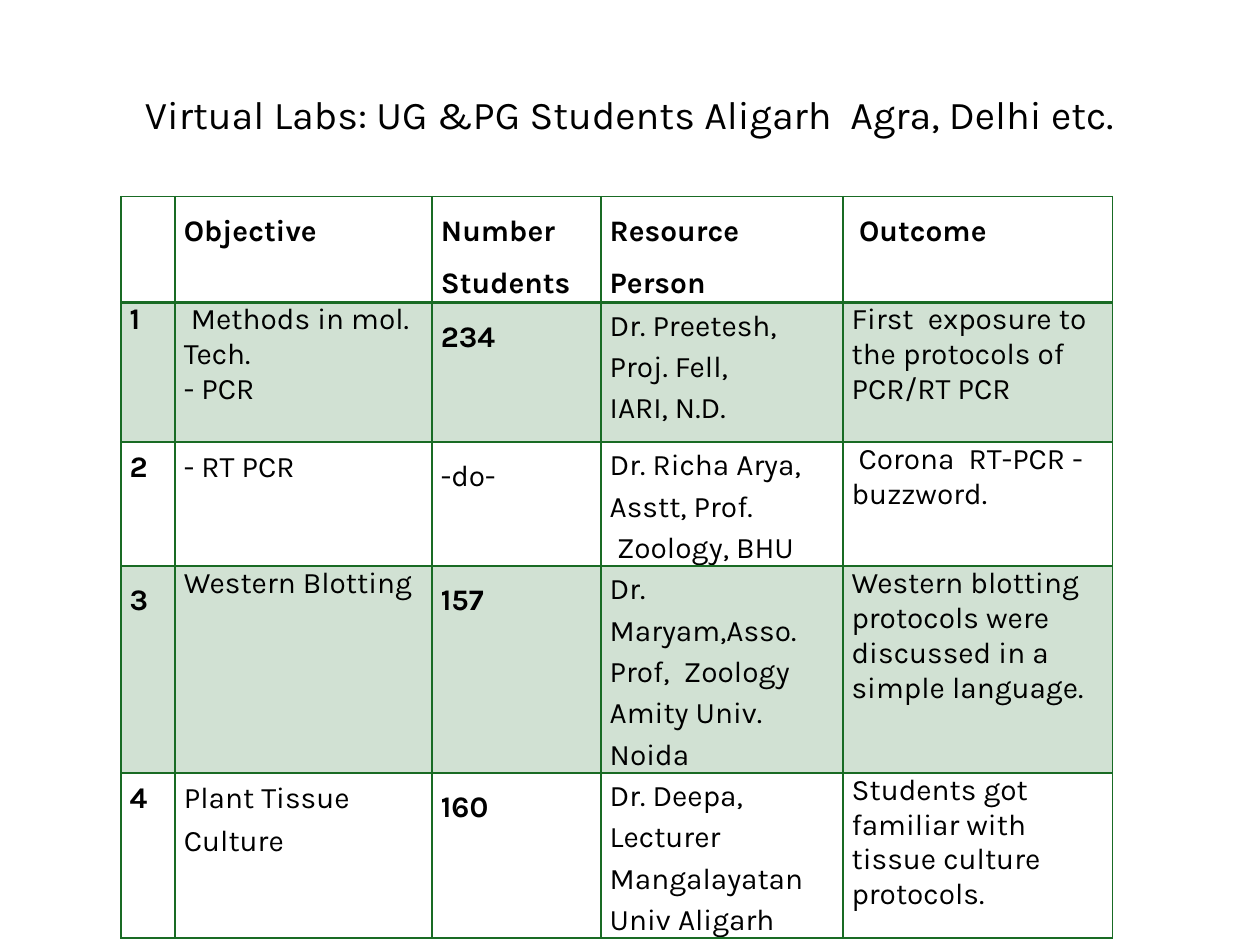
from pptx import Presentation
from pptx.dml.color import RGBColor
from pptx.enum.text import MSO_ANCHOR, PP_ALIGN
from pptx.oxml.ns import qn
from pptx.util import Inches, Pt
from lxml.etree import SubElement

BLACK = RGBColor(0x00, 0x00, 0x00)
GREEN = RGBColor(0x19, 0x6B, 0x24)
FONT = "Karla"


def write_text(frame, text, size=17, bold=False, spacing=None, align=PP_ALIGN.LEFT):
    """Fill a text frame, one paragraph for each line of the text."""
    for index, line in enumerate(text.split("\n")):
        para = frame.add_paragraph() if index else frame.paragraphs[0]
        para.alignment = align
        para.line_spacing = spacing
        para.space_before = Pt(0)
        span = para.add_run()
        span.text = line
        span.font.name = FONT
        span.font.size = Pt(size)
        span.font.bold = bold
        span.font.color.rgb = BLACK


def add_borders(cell, bottom_width):
    properties = cell._tc.get_or_add_tcPr()
    for side, width in (("L", 1), ("R", 1), ("T", 1), ("B", bottom_width)):
        line = SubElement(properties, qn(f"a:ln{side}"), w=str(Pt(width)))
        fill = SubElement(line, qn("a:solidFill"))
        SubElement(fill, qn("a:srgbClr"), val=str(GREEN))


deck = Presentation()
deck.slide_width = Inches(10)
deck.slide_height = Inches(7.5)
page = deck.slides.add_slide(deck.slide_layouts[5])

# Title
title = page.shapes.title
title.left, title.top = Inches(0.69), Inches(0.61)
title.width, title.height = Inches(8.62), Inches(0.63)
title.text_frame.word_wrap = True
title.text_frame.vertical_anchor = MSO_ANCHOR.MIDDLE
write_text(title.text_frame, "Virtual Labs: UG &PG Students Aligarh  Agra, Delhi etc.",
           size=22.5, spacing=0.9, align=PP_ALIGN.CENTER)

# Table content
rows = [
    ["", "Objective", "Number Students", "Resource Person", " Outcome"],
    ["1", " Methods in mol. Tech.\n- PCR", "234",
     "Dr. Preetesh,\nProj. Fell,\nIARI, N.D.",
     "First  exposure to the protocols of PCR/RT PCR"],
    ["2", "- RT PCR", "-do-", "Dr. Richa Arya, Asstt, Prof.\n Zoology, BHU",
     " Corona  RT-PCR - buzzword."],
    ["3", "Western Blotting", "157",
     "Dr. Maryam,Asso. Prof,  Zoology\nAmity Univ. Noida",
     "Western blotting protocols were discussed in a simple language."],
    ["4", "Plant Tissue Culture", "160", "Dr. Deepa, Lecturer Mangalayatan Univ Aligarh",
     "Students got familiar with tissue culture protocols."],
]
column_widths = [0.43, 2.04, 1.34, 1.92, 2.14]
row_heights = [0.84, 1.11, 0.98, 1.64, 1.31]

# Line spacing of the number and objective columns, by row
lead_spacings = [(1.5, 1.5), (None, None), (Pt(24.6), Pt(24.6)),
                 (1.5, None), (Pt(24.6), Pt(24.6))]

# Table
table = page.shapes.add_table(
    len(rows), len(column_widths), Inches(0.96), Inches(1.56),
    Inches(sum(column_widths)), Inches(sum(row_heights))).table
table.first_row = False
table.horz_banding = False
for column, width in zip(table.columns, column_widths):
    column.width = Inches(width)
for row, height in zip(table.rows, row_heights):
    row.height = Inches(height)

for r, texts in enumerate(rows):
    header = r == 0
    spacings = [1.5] * 5 if header else [*lead_spacings[r], 1.5, Pt(23.6), None]
    for c, text in enumerate(texts):
        cell = table.cell(r, c)
        cell.margin_left = cell.margin_right = Inches(0.07)
        cell.margin_top = cell.margin_bottom = Inches(0)
        add_borders(cell, bottom_width=2 if header else 1)

        # Odd rows carry a pale green band
        if r % 2:
            cell.fill.solid()
            cell.fill.fore_color.rgb = GREEN
            color = cell._tc.tcPr.find(qn("a:solidFill")).find(qn("a:srgbClr"))
            SubElement(color, qn("a:alpha"), val="20000")
        else:
            cell.fill.background()

        if text:
            write_text(cell.text_frame, text, spacing=spacings[c],
                       bold=header or text.isdigit())

deck.save("out.pptx")
